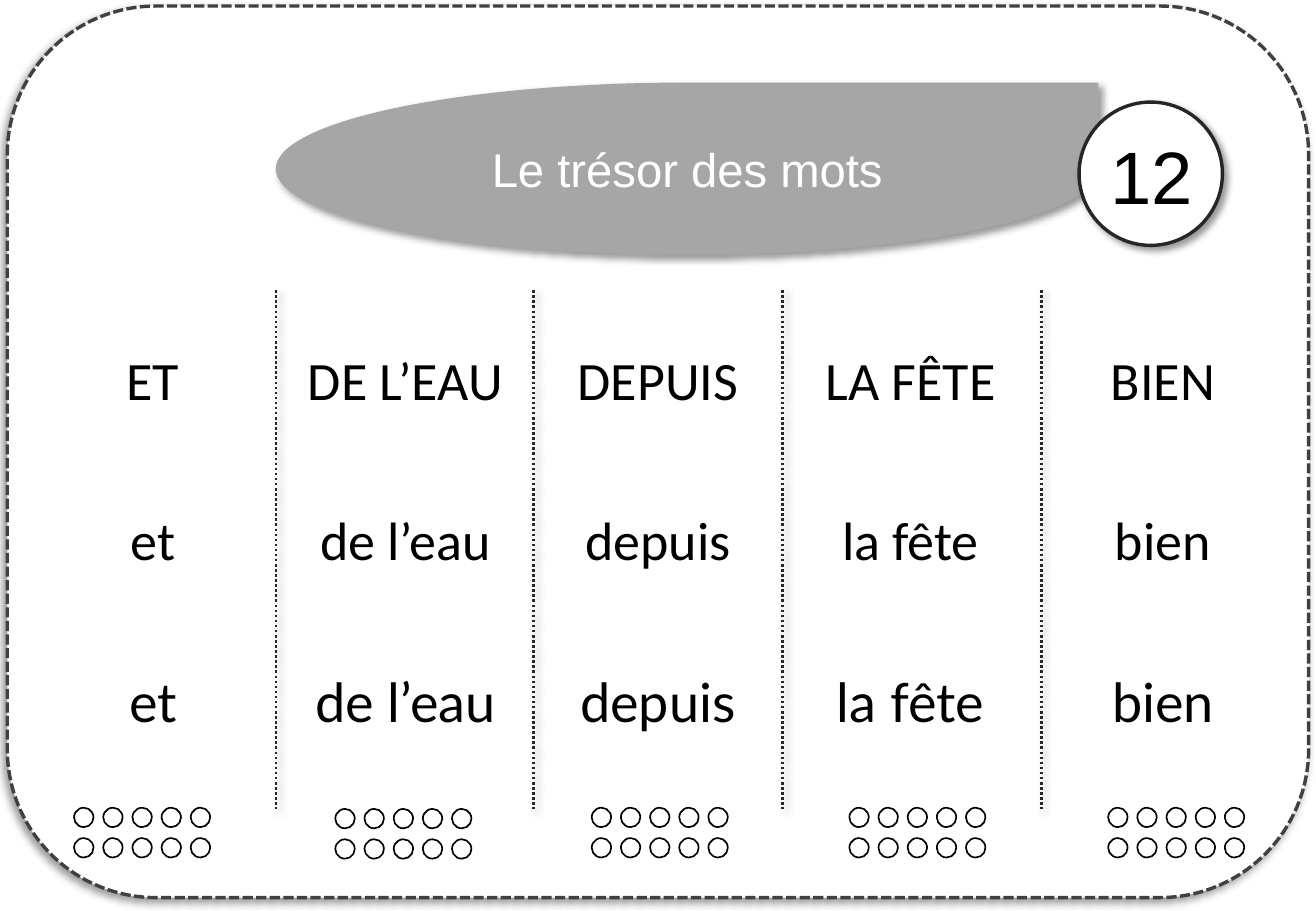
from lxml.etree import SubElement as Sub
from pptx import Presentation
from pptx.dml.color import RGBColor
from pptx.enum.dml import MSO_LINE_DASH_STYLE as Dash
from pptx.enum.shapes import MSO_CONNECTOR as Conn, MSO_SHAPE as Geo
from pptx.enum.text import MSO_ANCHOR as Anchor, PP_ALIGN as Align
from pptx.oxml.ns import qn
from pptx.util import Inches, Pt

WHITE = RGBColor(0xFF, 0xFF, 0xFF)
BLACK = RGBColor(0, 0, 0)
GREY = RGBColor(0xA6, 0xA6, 0xA6)
DARK = RGBColor(0x26, 0x26, 0x26)
EDGE = RGBColor(0x40, 0x40, 0x40)

ROWS = [
    ("Calibri", ["ET", "DE L’EAU", "DEPUIS", "LA FÊTE", "BIEN"]),
    ("Calibri", ["et", "de l’eau", "depuis", "la fête", "bien"]),
    ("Lato", ["et", "de l’eau", "depuis", "la fête", "bien"]),
]
RULES = [2.27, 4.39, 6.44, 8.57]
DOTS = [(0.61, 6.65), (2.76, 6.66), (4.87, 6.65), (6.99, 6.65), (9.12, 6.65)]


class Card:
    """Draws the parts of a word card on one slide."""

    def __init__(self, slide):
        self.shapes = slide.shapes

    def shade(self, item, angle=None):
        props = item._element.spPr
        for old in props.findall(qn("a:effectLst")):
            props.remove(old)
        effects = Sub(props, qn("a:effectLst"))
        if angle is not None:
            cast = Sub(effects, qn("a:outerShdw"), blurRad=str(Pt(4)), dist=str(Pt(3)),
                       dir=str(angle * 60000), algn="tl", rotWithShape="0")
            tint = Sub(cast, qn("a:srgbClr"), val="000000")
            Sub(tint, qn("a:alpha"), val="40000")

    def stroke(self, line, color, width, dash=None):
        line.color.rgb = color
        line.width = Pt(width)
        if dash:
            line.dash_style = dash

    def shape(self, geo, box, fill, line=None, angle=None, home=None):
        item = (home or self).shapes.add_shape(geo, *map(Inches, box))
        item.fill.solid()
        item.fill.fore_color.rgb = fill
        if line:
            self.stroke(item.line, *line)
        else:
            item.line.fill.background()
        self.shade(item, angle)
        return item

    def rule(self, x, top, end):
        line = self.shapes.add_connector(Conn.STRAIGHT, Inches(x), Inches(top), Inches(x), Inches(end))
        self.stroke(line.line, DARK, 1.5, Dash.ROUND_DOT)
        self.shade(line, 45)

    def dots(self, left, top):
        group = self.shapes.add_group_shape()
        for row in range(2):
            for col in range(5):
                box = (left + col * 0.24, top + row * 0.25, 0.16, 0.16)
                self.shape(Geo.OVAL, box, WHITE, (BLACK, 1), home=group)

    def text(self, frame, words, size, font, color):
        para = frame.paragraphs[0]
        para.alignment = Align.CENTER
        run = para.add_run()
        run.text = words
        run.font.size = Pt(size)
        run.font.name = font
        run.font.color.rgb = color

    def label(self, box, words, size):
        frame = self.shapes.add_textbox(*map(Inches, box)).text_frame
        frame.word_wrap = True
        frame.vertical_anchor = Anchor.TOP
        frame.margin_top = Inches(0.1)
        self.text(frame, words, size, "Arial", BLACK)

    def table(self, box, rows):
        count = len(rows[0][1])
        grid = self.shapes.add_table(len(rows), count, *map(Inches, box)).table
        grid.first_row = grid.horz_banding = False
        for row, (font, words) in enumerate(rows):
            for col, word in enumerate(words):
                cell = grid.cell(row, col)
                props = cell._tc.get_or_add_tcPr()
                for side in "LRTB":
                    Sub(Sub(props, qn("a:ln" + side)), qn("a:noFill"))
                cell.fill.background()
                cell.vertical_anchor = Anchor.MIDDLE
                self.text(cell.text_frame, word, 32, font, BLACK)


def main():
    deck = Presentation()
    deck.slide_width, deck.slide_height = Inches(10.83), Inches(7.5)
    card = Card(deck.slides.add_slide(deck.slide_layouts[6]))
    card.shape(Geo.ROUNDED_RECTANGLE, (0.06, 0.05, 10.71, 7.34), WHITE, (EDGE, 2, Dash.SQUARE_DOT), 135)
    for x in RULES:
        card.rule(x, 2.39, 6.66)
    for left, top in DOTS:
        card.dots(left, top)
    title = card.shape(Geo.TEAR, (2.27, 0.68, 6.77, 1.42), GREY, angle=45)
    title.text_frame.vertical_anchor = Anchor.MIDDLE
    card.text(title.text_frame, "Le trésor des mots", 28, "Arial", WHITE)
    card.shape(Geo.OVAL, (8.88, 0.84, 1.18, 1.18), WHITE, (DARK, 2), 45)
    card.label((8.89, 0.97, 1.18, 1.1), "12", 44)
    card.table((0.22, 2.49, 10.39, 3.94), ROWS)
    deck.save("out.pptx")


if __name__ == "__main__":
    main()
